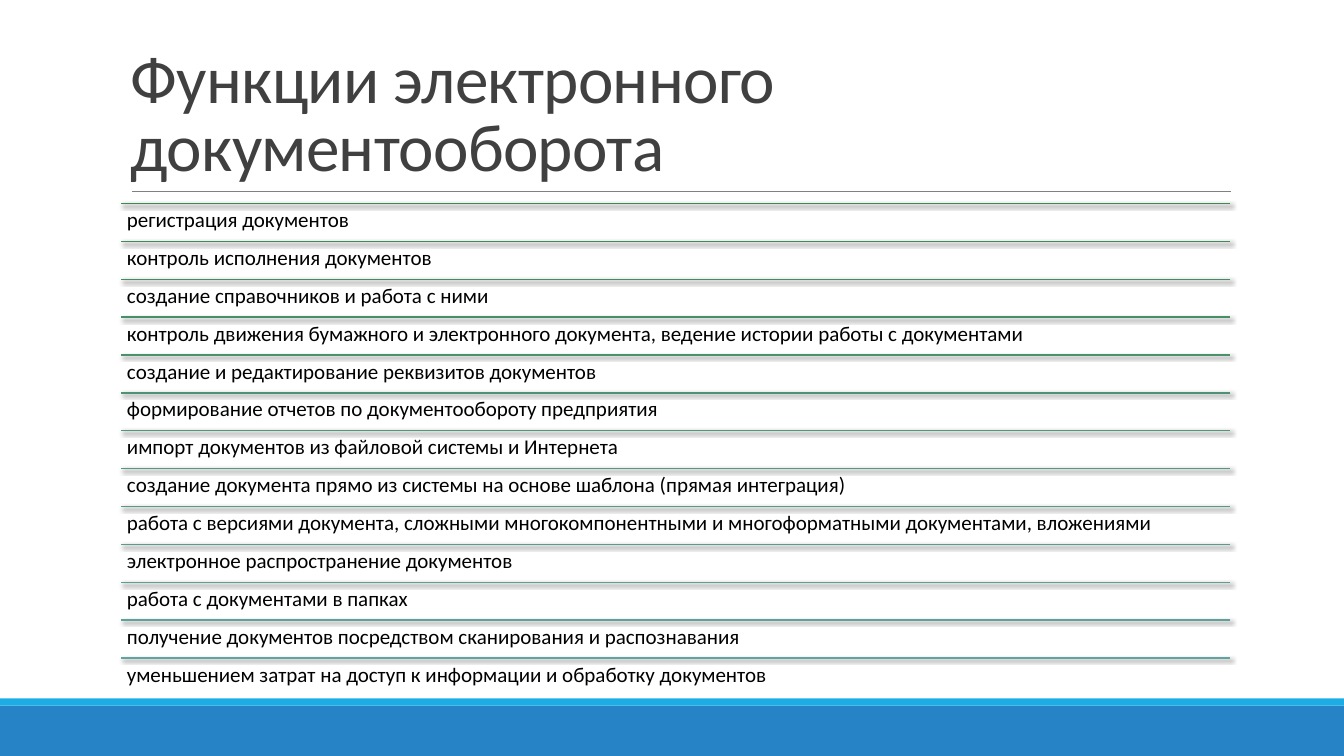
from lxml import etree
from pptx import Presentation
from pptx import util as u
from pptx.dml.color import RGBColor
from pptx.enum import shapes, text
from pptx.oxml import ns

Cm, Pt = u.Cm, u.Pt
HEX = {
    "base": "2683C6", "strip": "1CADE4", "grey": "808080",
    "title": "404040", "body": "000000",
    "first": "3E8853", "last": "62A39F",
}
ITEMS = [
    "регистрация документов",
    "контроль исполнения документов",
    "создание справочников и работа с ними",
    "контроль движения бумажного и электронного документа, ведение истории работы с документами",
    "создание и редактирование реквизитов документов",
    "формирование отчетов по документообороту предприятия",
    "импорт документов из файловой системы и Интернета",
    "создание документа прямо из системы на основе шаблона (прямая интеграция)",
    "работа с версиями документа, сложными многокомпонентными и многоформатными документами, вложениями",
    "электронное распространение документов",
    "работа с документами в папках",
    "получение документов посредством сканирования и распознавания",
    "уменьшением затрат на доступ к информации и обработку документов",
]

deck = Presentation()
deck.slide_width, deck.slide_height = Cm(33.87), Cm(19.05)
slide = deck.slides.add_slide(deck.slide_layouts[6])


def add_rule(x, y, wide, color, width):
    """Draw a horizontal line and return its empty effect list."""
    line = slide.shapes.add_connector(
        shapes.MSO_CONNECTOR.STRAIGHT, Cm(x), Cm(y), Cm(x + wide), Cm(y))
    line.line.color.rgb = color
    line.line.width = Pt(width)
    return etree.SubElement(line._element.spPr, ns.qn("a:effectLst"))


def add_label(y, high, words, size, color, inset, space, anchor):
    """Add a one-run text box in the main column and return the run."""
    box = slide.shapes.add_textbox(Cm(LEFT), Cm(y), Cm(WIDE), Cm(high))
    frame = box.text_frame
    frame.word_wrap = True
    frame.vertical_anchor = anchor
    frame.margin_left = frame.margin_right = Cm(inset)
    frame.margin_top = frame.margin_bottom = Cm(min(inset, 0.15))
    para = frame.paragraphs[0]
    para.line_spacing = space
    run = para.add_run()
    run.text = words
    run.font.name = "Calibri"
    run.font.size = Pt(size)
    run.font.color.rgb = RGBColor.from_string(HEX[color])
    return run


LEFT, WIDE = 3.05, 27.94

# Bottom bands
for name, y, high in [("base", 17.78, 1.27), ("strip", 17.6, 0.18)]:
    band = slide.shapes.add_shape(
        shapes.MSO_SHAPE.RECTANGLE, 0, Cm(y), deck.slide_width, Cm(high))
    band.shadow.inherit = False
    band.fill.solid()
    band.fill.fore_color.rgb = RGBColor.from_string(HEX[name])
    band.line.fill.background()

# Title and its underline
add_rule(3.33, 4.83, 27.68, RGBColor.from_string(HEX["grey"]), 0.5)
title = add_label(0.79, 4.04, "Функции электронного документооборота", 48,
                  "title", 0.25, 0.85, text.MSO_ANCHOR.BOTTOM)
title.font._element.set("spc", "-50")

# List rows: rules shade evenly from the first colour to the last
TOP, END = 5.13, 16.58
steps = len(ITEMS) - 1
pitch = (END - TOP) / steps
first = RGBColor.from_string(HEX["first"])
last = RGBColor.from_string(HEX["last"])
for i, item in enumerate(ITEMS):
    y = TOP + i * pitch
    shade = RGBColor(*(round(a + (b - a) * i / steps)
                       for a, b in zip(first, last)))
    effect = add_rule(LEFT, y, WIDE, shade, 1)
    shadow = etree.SubElement(
        effect, ns.qn("a:outerShdw"), blurRad=str(Pt(3)), dist=str(Pt(2)),
        dir="2700000", algn="ctr", rotWithShape="0")
    black = etree.SubElement(shadow, ns.qn("a:srgbClr"), val=HEX["body"])
    etree.SubElement(black, ns.qn("a:alpha"), val="60000")
    add_label(y, pitch, item, 15, "body", 0.15, 0.9, text.MSO_ANCHOR.TOP)

deck.save("out.pptx")
